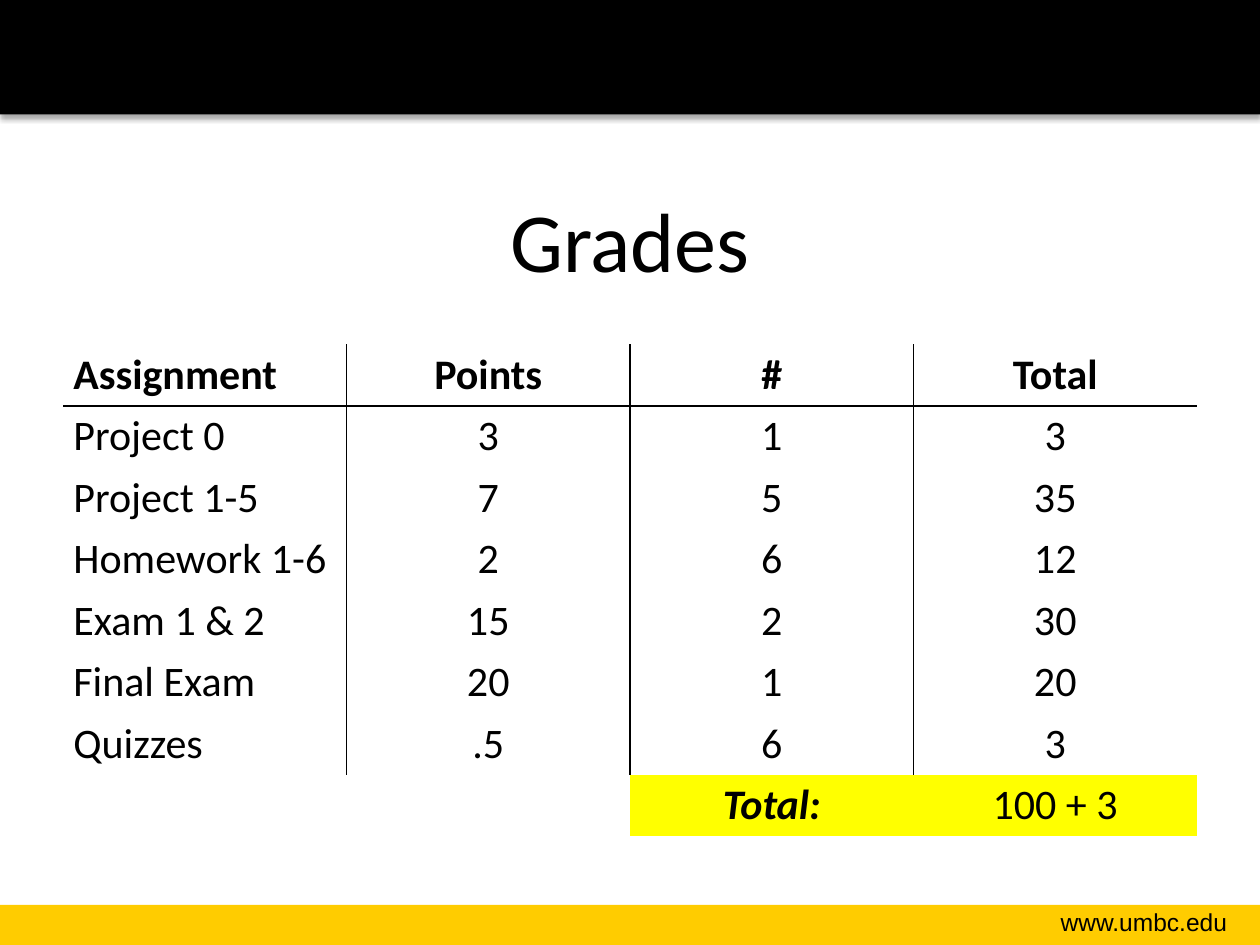
from lxml import etree
from pptx import Presentation
from pptx.dml.color import RGBColor
from pptx.enum.shapes import MSO_SHAPE
from pptx.enum.text import MSO_ANCHOR, PP_ALIGN
from pptx.oxml.ns import qn
from pptx.util import Cm, Pt

BLACK = RGBColor(0x00, 0x00, 0x00)
WHITE = RGBColor(0xFF, 0xFF, 0xFF)
GOLD = RGBColor(0xFF, 0xCC, 0x00)
YELLOW = RGBColor(0xFF, 0xFF, 0x00)
RECTANGLE = MSO_SHAPE.RECTANGLE
MIDDLE = MSO_ANCHOR.MIDDLE
LEFT, CENTER, RIGHT = PP_ALIGN.LEFT, PP_ALIGN.CENTER, PP_ALIGN.RIGHT

SLIDE_WIDTH, SLIDE_HEIGHT = Cm(25.4), Cm(19.05)
COLUMN_WIDTH, ROW_HEIGHT = Cm(5.715), Cm(1.24)
GRADES = [
    ("Assignment", "Points", "#", "Total"),
    ("Project 0", "3", "1", "3"),
    ("Project 1-5", "7", "5", "35"),
    ("Homework 1-6", "2", "6", "12"),
    ("Exam 1 & 2", "15", "2", "30"),
    ("Final Exam", "20", "1", "20"),
    ("Quizzes", ".5", "6", "3"),
    ("", "", "Total:", "100 + 3"),
]
SUM_ROW = len(GRADES) - 1
LAST_COLUMN = len(GRADES[0]) - 1


def format_text(frame, size, font_name, align, bold=False, italic=False):
    for paragraph in frame.paragraphs:
        paragraph.alignment = align
        for run in paragraph.runs:
            run.font.size = Pt(size)
            run.font.name = font_name
            run.font.bold = bold
            run.font.italic = italic
            run.font.color.rgb = BLACK


def add_band(slide, top, height, color):
    band = slide.shapes.add_shape(RECTANGLE, 0, top, SLIDE_WIDTH, height)
    band.shadow.inherit = False
    band.fill.solid()
    band.fill.fore_color.rgb = color
    band.line.fill.background()
    return band


def add_shadow(band):
    effects = band._element.spPr.find(qn("a:effectLst"))
    shadow = etree.SubElement(effects, qn("a:outerShdw"), blurRad=str(Pt(3.1)),
                              dist=str(Pt(1.8)), dir="5400000", rotWithShape="0")
    color = etree.SubElement(shadow, qn("a:srgbClr"), val=str(BLACK))
    etree.SubElement(color, qn("a:alpha"), val="35000")


def add_web_address(slide):
    address = slide.shapes.add_textbox(Cm(19.94), Cm(18.16), Cm(5.05), Cm(0.86))
    address.text_frame.word_wrap = True
    address.text_frame.text = "www.umbc.edu"
    format_text(address.text_frame, 14, "Arial", RIGHT)


def place_title(slide):
    title = slide.shapes.title
    title.left, title.top = Cm(1.27), Cm(3.23)
    title.width, title.height = Cm(22.86), Cm(3.18)
    title.text_frame.text = "Grades"
    title.text_frame.vertical_anchor = MIDDLE
    format_text(title.text_frame, 48, "Calibri", CENTER)


def set_borders(cell, ruled_sides):
    properties = cell._tc.get_or_add_tcPr()
    for side in "LRTB":
        border = etree.SubElement(properties, qn(f"a:ln{side}"), w=str(Pt(1)))
        if side in ruled_sides:
            fill = etree.SubElement(border, qn("a:solidFill"))
            etree.SubElement(fill, qn("a:srgbClr"), val=str(BLACK))
        else:
            etree.SubElement(border, qn("a:noFill"))


def find_ruled_sides(row, column):
    sides = ""
    if row < SUM_ROW:
        sides += "L" if column > 0 else ""
        sides += "R" if column < LAST_COLUMN else ""
    return sides + {0: "B", 1: "T"}.get(row, "")


def add_grades(slide):
    grades = slide.shapes.add_table(
        len(GRADES), LAST_COLUMN + 1, Cm(1.27), Cm(6.94),
        COLUMN_WIDTH * (LAST_COLUMN + 1), ROW_HEIGHT * len(GRADES)).table
    grades.first_row = False
    grades.horz_banding = False
    for row, entries in enumerate(GRADES):
        for column, entry in enumerate(entries):
            cell = grades.cell(row, column)
            is_sum_label = entry == "Total:"
            set_borders(cell, find_ruled_sides(row, column))
            cell.fill.solid()
            cell.fill.fore_color.rgb = YELLOW if row == SUM_ROW and entry else WHITE
            cell.margin_left = cell.margin_right = Cm(0.21)
            cell.margin_top = cell.margin_bottom = Cm(0.1)
            cell.vertical_anchor = MIDDLE
            cell.text_frame.text = entry
            format_text(cell.text_frame, 24, "Calibri", CENTER if column else LEFT,
                        bold=row == 0 or is_sum_label, italic=is_sum_label)


def main():
    presentation = Presentation()
    presentation.slide_width, presentation.slide_height = SLIDE_WIDTH, SLIDE_HEIGHT
    slide = presentation.slides.add_slide(presentation.slide_layouts[5])
    add_band(slide, Cm(18.24), Cm(0.81), GOLD)
    add_shadow(add_band(slide, 0, Cm(2.31), BLACK))
    add_web_address(slide)
    place_title(slide)
    add_grades(slide)
    presentation.save("out.pptx")


if __name__ == "__main__":
    main()
